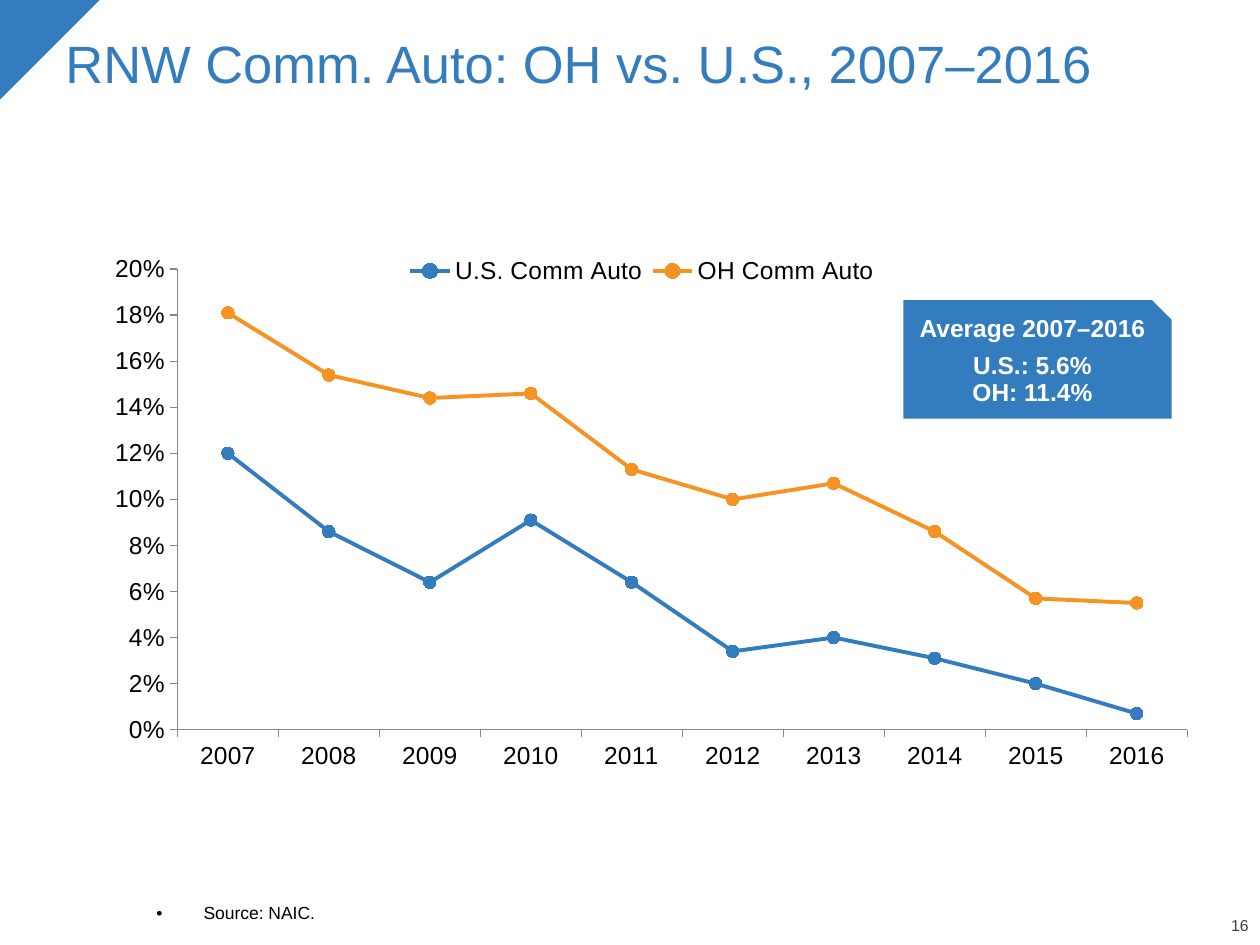
from lxml import etree
from pptx import Presentation
from pptx import util as u
from pptx.chart.data import CategoryChartData
from pptx.dml.color import RGBColor
from pptx.enum import chart as charts, shapes, text
from pptx.oxml.ns import qn

COLORS = {"blue": "337DBE", "orange": "F69322", "black": "000000",
          "white": "FFFFFF", "gray": "404040", "axis": "868686"}
FONT = "Arial"
YEARS = [str(year) for year in range(2007, 2017)]
RETURNS = [
    ("U.S. Comm Auto", "blue",
     [0.12, 0.086, 0.064, 0.091, 0.064, 0.034, 0.04, 0.031, 0.02, 0.007]),
    ("OH Comm Auto", "orange",
     [0.181, 0.154, 0.144, 0.146, 0.113, 0.1, 0.107, 0.086, 0.057, 0.055]),
]


def color(name):
    return RGBColor.from_string(COLORS[name])


def area(left, top, width, height):
    return [u.Cm(value) for value in (left, top, width, height)]


def place(shape, *bounds):
    shape.left, shape.top, shape.width, shape.height = area(*bounds)


def style_font(font, size, color_name, bold=False):
    font.name, font.size, font.bold = FONT, u.Pt(size), bold
    font.color.rgb = color(color_name)


def write(shape, lines, size, color_name, align, anchor, margins, bold=False, gaps=None):
    frame = shape.text_frame
    frame.word_wrap = True
    frame.auto_size = text.MSO_AUTO_SIZE.NONE
    frame.vertical_anchor = anchor
    (frame.margin_left, frame.margin_top,
     frame.margin_right, frame.margin_bottom) = area(*margins)
    frame.text = "\n".join(lines)
    for index, para in enumerate(frame.paragraphs):
        para.alignment = align
        para.line_spacing = 0.9
        para.space_before = u.Pt((gaps or {}).get(index, 0))
        style_font(para.font, size, color_name, bold)


def add_solid(slide, kind, *bounds):
    shape = slide.shapes.add_shape(kind, *area(*bounds))
    shape.shadow.inherit = False
    shape.fill.solid()
    shape.fill.fore_color.rgb = color("blue")
    shape.line.fill.background()
    return shape


def remove_bullet(para):
    properties = para._p.get_or_add_pPr()
    properties.set("marL", "0")
    properties.set("indent", "0")
    etree.SubElement(properties, qn("a:buNone"))


def set_layout(element, index, inner, **fractions):
    """Fix a chart part at fractions of the chart area."""
    for old in element.findall(qn("c:layout")):
        element.remove(old)
    layout = etree.Element(qn("c:layout"))
    element.insert(index, layout)
    manual = etree.SubElement(layout, qn("c:manualLayout"))
    settings = {"layoutTarget": "inner"} if inner else {}
    settings.update(xMode="edge", yMode="edge", **fractions)
    for tag, value in settings.items():
        etree.SubElement(manual, qn("c:" + tag)).set("val", str(value))


def style_axis(axis, number_format):
    axis.has_major_gridlines = False
    axis.major_tick_mark = charts.XL_TICK_MARK.OUTSIDE
    axis.minor_tick_mark = charts.XL_TICK_MARK.NONE
    axis.tick_labels.number_format = number_format
    axis.tick_labels.number_format_is_linked = False
    axis.format.line.color.rgb = color("axis")
    axis.format.line.width = u.Pt(0.75)
    style_font(axis.tick_labels.font, 14, "black")


def add_line_chart(slide, *bounds):
    data = CategoryChartData(number_format="0.0%")
    data.categories = YEARS
    for name, _, values in RETURNS:
        data.add_series(name, values)
    chart = slide.shapes.add_chart(
        charts.XL_CHART_TYPE.LINE_MARKERS, *area(*bounds), data).chart
    chart.has_title = False
    style_font(chart.font, 18, "black")
    chart.plots[0].vary_by_categories = False

    # Axes
    style_axis(chart.category_axis, "0")
    style_axis(chart.value_axis, "0%")
    chart.value_axis.minimum_scale = 0
    chart.value_axis.maximum_scale = 0.2
    chart.value_axis.major_unit = 0.02

    # Series
    for series, (_, color_name, _) in zip(chart.plots[0].series, RETURNS):
        series.smooth = False
        series.format.line.color.rgb = color(color_name)
        series.format.line.width = u.Pt(2.25)
        marker = series.marker
        marker.style = charts.XL_MARKER_STYLE.CIRCLE
        marker.size = 7
        marker.format.fill.solid()
        marker.format.fill.fore_color.rgb = color(color_name)
        marker.format.line.color.rgb = color(color_name)

    # Legend over the top of the plot
    chart.has_legend = True
    legend = chart.legend
    legend.position = charts.XL_LEGEND_POSITION.TOP
    legend.include_in_layout = False
    style_font(legend.font, 14, "black")
    set_layout(legend._element, 1, False, x=0.3, y=0.05, w=0.42, h=0.06)
    plot_area = chart._chartSpace.find(qn("c:chart")).find(qn("c:plotArea"))
    set_layout(plot_area, 0, True, x=0.107, y=0.077, w=0.876, h=0.749)


def main():
    deck = Presentation()
    deck.slide_width, deck.slide_height = u.Cm(25.4), u.Cm(19.05)
    slide = deck.slides.add_slide(deck.slide_layouts[1])
    title, source = slide.placeholders
    left, center, right = (text.PP_ALIGN.LEFT, text.PP_ALIGN.CENTER,
                           text.PP_ALIGN.RIGHT)
    top, middle, bottom = (text.MSO_ANCHOR.TOP, text.MSO_ANCHOR.MIDDLE,
                           text.MSO_ANCHOR.BOTTOM)
    no_margins = (0, 0, 0, 0)

    # Corner and title
    corner = add_solid(slide, shapes.MSO_SHAPE.RIGHT_TRIANGLE, -0.02, 0, 2.03, 2.03)
    corner.rotation = 90
    place(title, 1.07, 0.64, 23.5, 2.64)
    write(title, ["RNW Comm. Auto: OH vs. U.S., 2007–2016"], 30, "blue",
          left, top, (0.25, 0.13, 0.25, 0.13))

    # Chart and averages
    add_line_chart(slide, 1.09, 4.47, 23.24, 12.4)
    callout = add_solid(slide, shapes.MSO_SHAPE.SNIP_1_RECTANGLE,
                        18.21, 6.05, 5.41, 2.39)
    write(callout, ["Average 2007–2016", "U.S.: 5.6%", "OH: 11.4%"], 14, "white",
          center, middle, (0.25, 0.13, 0.25, 0.25), bold=True, gaps={1: 6})

    # Source and page number
    place(source, 3.15, 17.48, 21.34, 1.14)
    remove_bullet(source.text_frame.paragraphs[0])
    write(source, ["Source: NAIC."], 10, "black", left, bottom, no_margins)
    page = slide.shapes.add_textbox(*area(23.95, 18.52, 1.22, 0.33))
    write(page, ["16"], 9, "gray", right, bottom, no_margins)

    deck.save("out.pptx")


if __name__ == "__main__":
    main()
